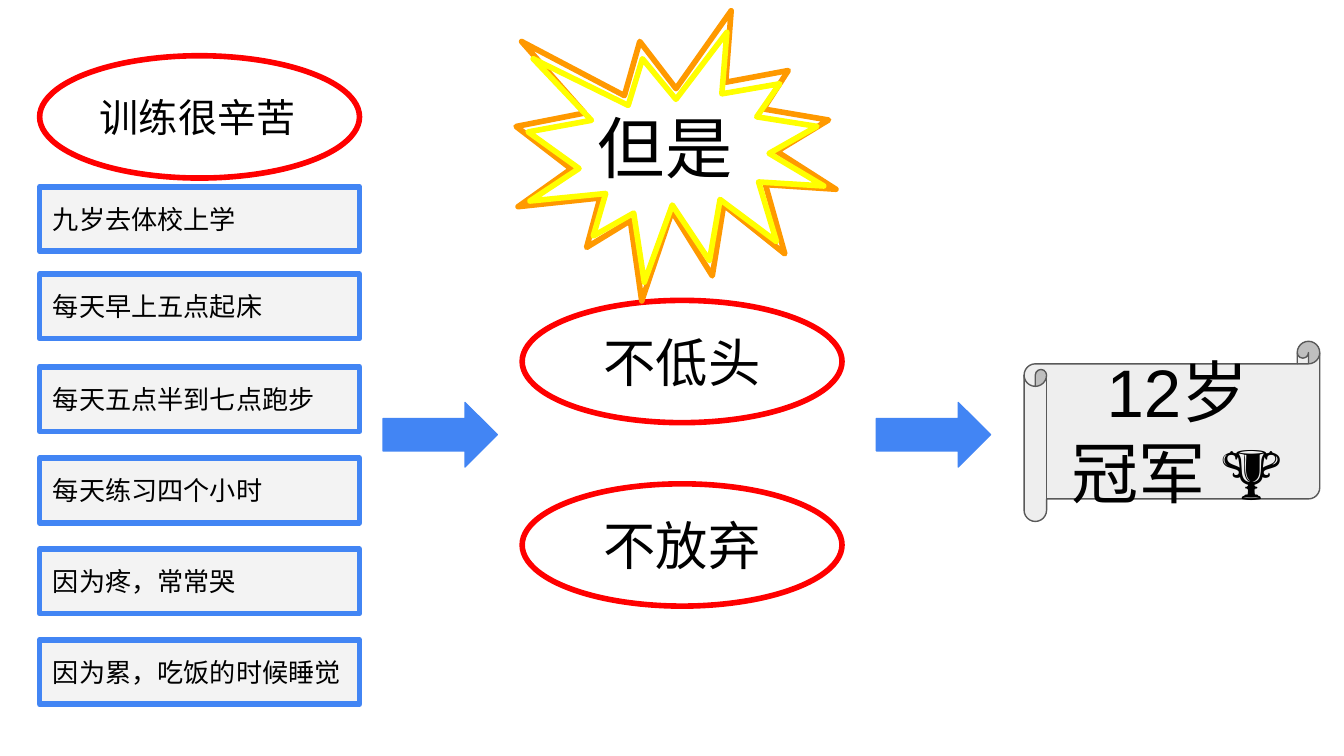
"""Build a slide that leads from hard training, through persistence, to a championship."""
from dataclasses import dataclass

from pptx import Presentation
from pptx.dml.color import RGBColor
from pptx.enum.shapes import MSO_SHAPE
from pptx.enum.text import MSO_ANCHOR, PP_ALIGN
from pptx.util import Pt

PX = 4572


@dataclass(frozen=True)
class Theme:
    font: str = "Arial"
    text: str = "000000"
    white: str = "FFFFFF"
    red: str = "FF0000"
    blue: str = "4285F4"
    pale: str = "F3F3F3"
    paper: str = "EEEEEE"
    edge: str = "595959"
    orange: str = "FF9900"
    yellow: str = "FFFF00"
    item_size: int = 14
    heading_size: int = 21
    answer_size: int = 28
    big_size: int = 36
    thick: float = 3
    thin: float = 0.75


theme = Theme()


def draw(shapes, kind, place, fill, line, width=theme.thick):
    shape = shapes.add_shape(kind, *(value * PX for value in place))
    shape.shadow.inherit = False
    if fill:
        shape.fill.solid()
        shape.fill.fore_color.rgb = RGBColor.from_string(fill)
    else:
        shape.fill.background()
    shape.line.color.rgb = RGBColor.from_string(line)
    shape.line.width = Pt(width)
    return shape


def write(shape, text, size=theme.item_size, align=PP_ALIGN.LEFT):
    frame = shape.text_frame
    frame.word_wrap = True
    frame.vertical_anchor = MSO_ANCHOR.MIDDLE
    frame.margin_left = frame.margin_right = 20 * PX
    frame.margin_top = frame.margin_bottom = 20 * PX
    frame.text = text
    for para in frame.paragraphs:
        para.alignment = align
        for span in para.runs:
            span.font.name = theme.font
            span.font.size = Pt(size)
            span.font.color.rgb = RGBColor.from_string(theme.text)


deck = Presentation()
deck.slide_width = 2000 * PX
deck.slide_height = 1125 * PX
page = deck.slides.add_slide(deck.slide_layouts[6])

heading = draw(page.shapes, MSO_SHAPE.OVAL, (59, 83, 476, 182), theme.white, theme.red)
write(heading, "训练很辛苦", size=theme.heading_size)

hardships = [
    (278, "九岁去体校上学"),
    (408, "每天早上五点起床"),
    (546, "每天五点半到七点跑步"),
    (682, "每天练习四个小时"),
    (817, "因为疼，常常哭"),
    (952, "因为累，吃饭的时候睡觉"),
]
for top, text in hardships:
    box = draw(page.shapes, MSO_SHAPE.RECTANGLE, (59, top, 476, 96), theme.pale, theme.blue)
    write(box, text)

for top, text in [(447, "不低头"), (720, "不放弃")]:
    answer = draw(page.shapes, MSO_SHAPE.OVAL, (777, top, 476, 182), theme.white, theme.red)
    write(answer, text, size=theme.answer_size, align=PP_ALIGN.CENTER)

for left in (570, 1304):
    draw(page.shapes, MSO_SHAPE.RIGHT_ARROW, (left, 599, 170, 96), theme.blue, theme.blue, theme.thin)

scroll = draw(page.shapes, MSO_SHAPE.HORIZONTAL_SCROLL, (1524, 508, 440, 268),
              theme.paper, theme.edge, theme.thin)
write(scroll, "12岁\n冠军 🏆", size=theme.big_size, align=PP_ALIGN.CENTER)

burst = page.shapes.add_group_shape()
outer = draw(burst.shapes, MSO_SHAPE.EXPLOSION1, (768, 16, 476, 432), theme.white, theme.orange)
write(outer, "但是", size=theme.big_size)
draw(burst.shapes, MSO_SHAPE.EXPLOSION1, (786, 48, 440, 372), None, theme.yellow)

deck.save("out.pptx")
